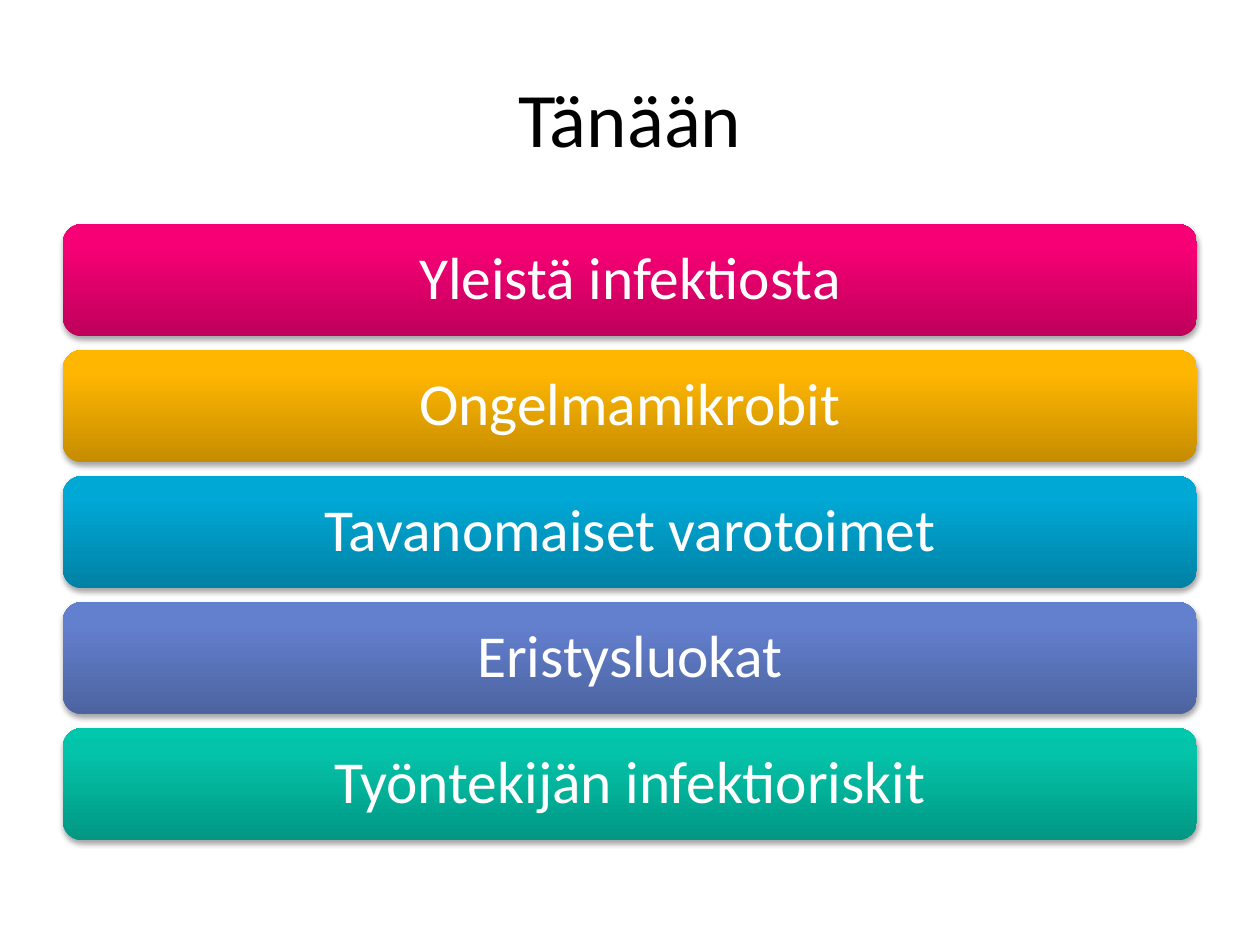
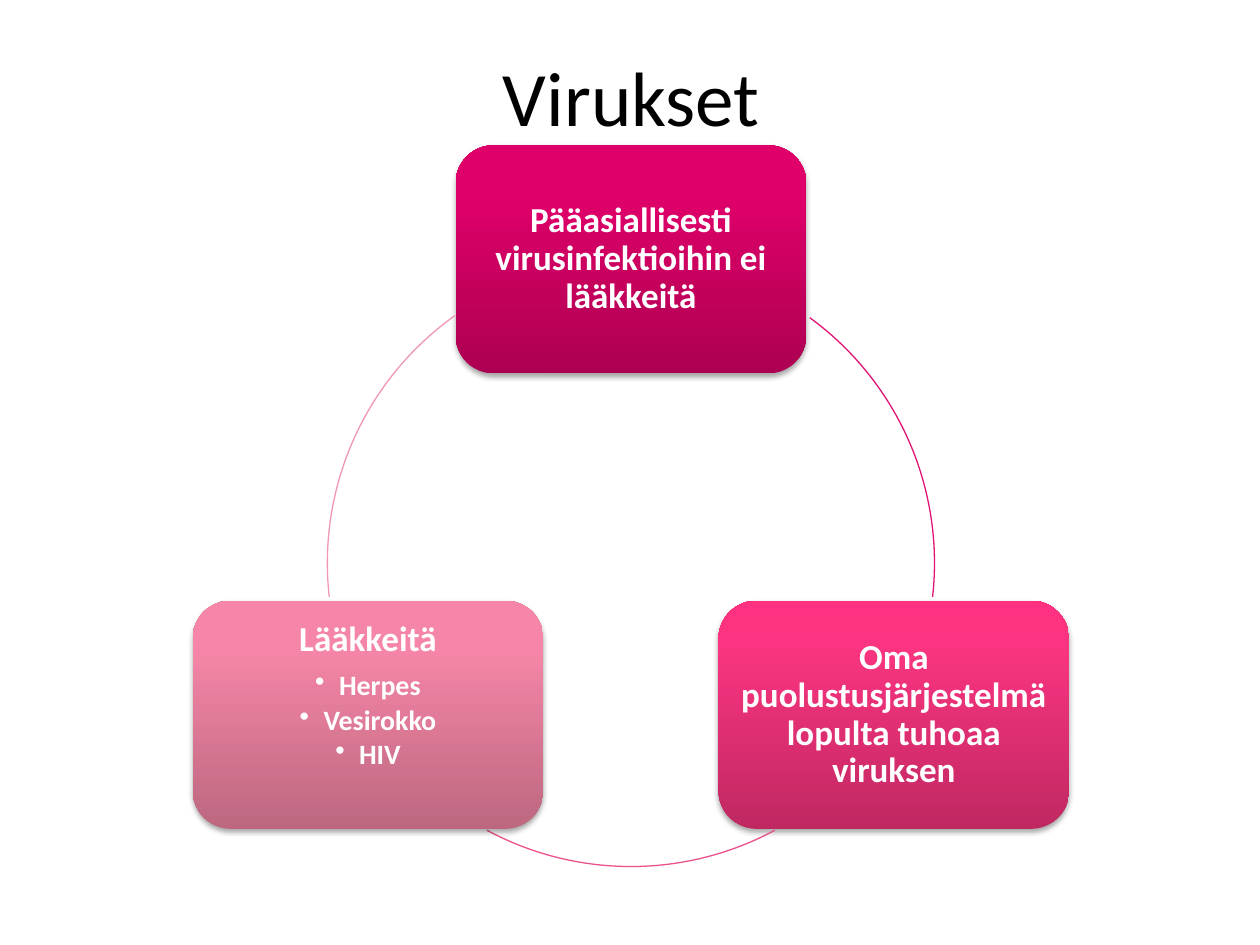
import copy
import math

import lxml.etree
import pptx
import pptx.dml.color
import pptx.enum.shapes
import pptx.enum.text
import pptx.oxml.ns
import pptx.util

Cm = pptx.util.Cm
Pt = pptx.util.Pt
SHAPES = pptx.enum.shapes.MSO_SHAPE
ANCHOR = pptx.enum.text.MSO_ANCHOR
qn = pptx.oxml.ns.qn

FONT = "Calibri"
COLOURS = {"title": "000000", "label": "FFFFFF", "shadow": "000000"}
GRADIENTS = {
    "pink": ("BE005A", "F70075", "F80076"),
    "amber": ("C58C00", "FFB601", "FFB602"),
    "cyan": ("0081A4", "00A8D5", "00A8D6"),
    "indigo": ("4C639F", "6380CE", "6180D1"),
    "teal": ("029783", "03C4AA", "00C8AD"),
    "magenta": ("AD0052", "E0006A", "E1006B"),
    "rose": ("C02862", "FA3480", "FF3180"),
    "blush": ("BD6880", "F686A7", "F985A7"),
}
STOPS = (0, 0.8, 1)

TOPICS = [
    ("Yleistä infektiosta", "pink"),
    ("Ongelmamikrobit", "amber"),
    ("Tavanomaiset varotoimet", "cyan"),
    ("Eristysluokat", "indigo"),
    ("Työntekijän infektioriskit", "teal"),
]
VIRUS_CYCLE = [
    {"text": "Pääasiallisesti virusinfektioihin ei lääkkeitä", "points": [],
     "gradient": "magenta", "arc": (306.1, 6.4), "arc_colour": "E01475"},
    {"text": "Oma puolustusjärjestelmä lopulta tuhoaa viruksen", "points": [],
     "gradient": "rose", "arc": (61.7, 118.3), "arc_colour": "EB528D"},
    {"text": "Lääkkeitä", "points": ["Herpes", "Vesirokko", "HIV"],
     "gradient": "blush", "arc": (173.6, 234.6), "arc_colour": "F097B1"},
]

TOPIC_LEFT, TOPIC_TOP, TOPIC_WIDTH, TOPIC_HEIGHT, TOPIC_PITCH = 1.27, 4.52, 22.86, 2.26, 2.54
RING_X, RING_Y, RING_RADIUS = 12.72, 11.35, 6.12
CARD_WIDTH, CARD_HEIGHT = 7.07, 4.6


def rgb(value):
    return pptx.dml.color.RGBColor.from_string(value)


def write(paragraph, text, size, colour, bold=False):
    paragraph.text = text
    paragraph.alignment = pptx.enum.text.PP_ALIGN.CENTER
    font = paragraph.font
    font.name, font.size, font.bold = FONT, Pt(size), bold
    font.color.rgb = rgb(COLOURS[colour])


def add_title(slide, text, left, top):
    frame = slide.shapes.add_textbox(Cm(left), Cm(top), Cm(22.86), Cm(3.18)).text_frame
    frame.word_wrap = True
    frame.vertical_anchor = ANCHOR.MIDDLE
    write(frame.paragraphs[0], text, 44, "title")


def fill_gradient(shape, name):
    fill = shape.fill
    fill.gradient()
    fill.gradient_angle = 90
    stop_list = shape.element.spPr.find(".//" + qn("a:gsLst"))
    stop_list.append(copy.deepcopy(stop_list[-1]))
    for stop, position, colour in zip(fill.gradient_stops, STOPS, GRADIENTS[name]):
        stop.position = position
        stop.color.rgb = rgb(colour)


def drop_shadow(shape):
    effects = shape.element.spPr.find(qn("a:effectLst"))
    shadow = lxml.etree.SubElement(effects, qn("a:outerShdw"), blurRad="40000",
                                   dist="23000", dir="5400000", rotWithShape="0")
    colour = lxml.etree.SubElement(shadow, qn("a:srgbClr"), val=COLOURS["shadow"])
    lxml.etree.SubElement(colour, qn("a:alpha"), val="35000")


def add_panel(slide, box, gradient, inset):
    panel = slide.shapes.add_shape(SHAPES.ROUNDED_RECTANGLE, *map(Cm, box))
    panel.line.fill.background()
    panel.shadow.inherit = False
    fill_gradient(panel, gradient)
    drop_shadow(panel)
    frame = panel.text_frame
    frame.word_wrap = True
    frame.margin_left = frame.margin_right = Cm(inset)
    frame.margin_top = frame.margin_bottom = Cm(inset)
    return frame


def write_label(paragraph, text, size, after, bold=False):
    paragraph.line_spacing = 0.9
    paragraph.space_after = Pt(round(size * after, 1))
    write(paragraph, text, size, "label", bold)


def add_bullet(paragraph):
    paragraph.level = 1
    properties = paragraph._p.get_or_add_pPr()
    indent = Cm(0.48)
    properties.set("marL", str(indent))
    properties.set("indent", str(-indent))
    lxml.etree.SubElement(properties, qn("a:buChar"), char="•")


def add_arc(slide, angles, colour):
    arc = slide.shapes.add_shape(SHAPES.ARC, Cm(RING_X - RING_RADIUS), Cm(RING_Y - RING_RADIUS),
                                 Cm(2 * RING_RADIUS), Cm(2 * RING_RADIUS))
    arc.shadow.inherit = False
    arc.fill.background()
    arc.line.color.rgb = rgb(colour)
    arc.line.width = Pt(0.75)
    for index, angle in enumerate(angles):
        arc.adjustments[index] = angle * 0.6


def build_today(slide):
    add_title(slide, "Tänään", 1.27, 0.76)
    for row, (topic, gradient) in enumerate(TOPICS):
        box = (TOPIC_LEFT, TOPIC_TOP + row * TOPIC_PITCH, TOPIC_WIDTH, TOPIC_HEIGHT)
        frame = add_panel(slide, box, gradient, 0.36)
        write_label(frame.paragraphs[0], topic, 34, 0.35)


def build_viruses(slide):
    add_title(slide, "Virukset", 1.3, 0.33)
    for index, card in enumerate(VIRUS_CYCLE):
        angle = math.radians(index * 360 / len(VIRUS_CYCLE) - 90)
        box = (RING_X + RING_RADIUS * math.cos(angle) - CARD_WIDTH / 2,
               RING_Y + RING_RADIUS * math.sin(angle) - CARD_HEIGHT / 2,
               CARD_WIDTH, CARD_HEIGHT)
        frame = add_panel(slide, box, card["gradient"], 0.2)
        write_label(frame.paragraphs[0], card["text"], 20, 0.35, bold=True)
        if card["points"]:
            frame.vertical_anchor = ANCHOR.TOP
        for point in card["points"]:
            paragraph = frame.add_paragraph()
            add_bullet(paragraph)
            write_label(paragraph, point, 16, 0.15, bold=True)
        add_arc(slide, card["arc"], card["arc_colour"])


def main():
    deck = pptx.Presentation()
    deck.slide_width, deck.slide_height = Cm(25.4), Cm(19.05)
    for build in (build_today, build_viruses):
        build(deck.slides.add_slide(deck.slide_layouts[6]))
    deck.save("out.pptx")


if __name__ == "__main__":
    main()
